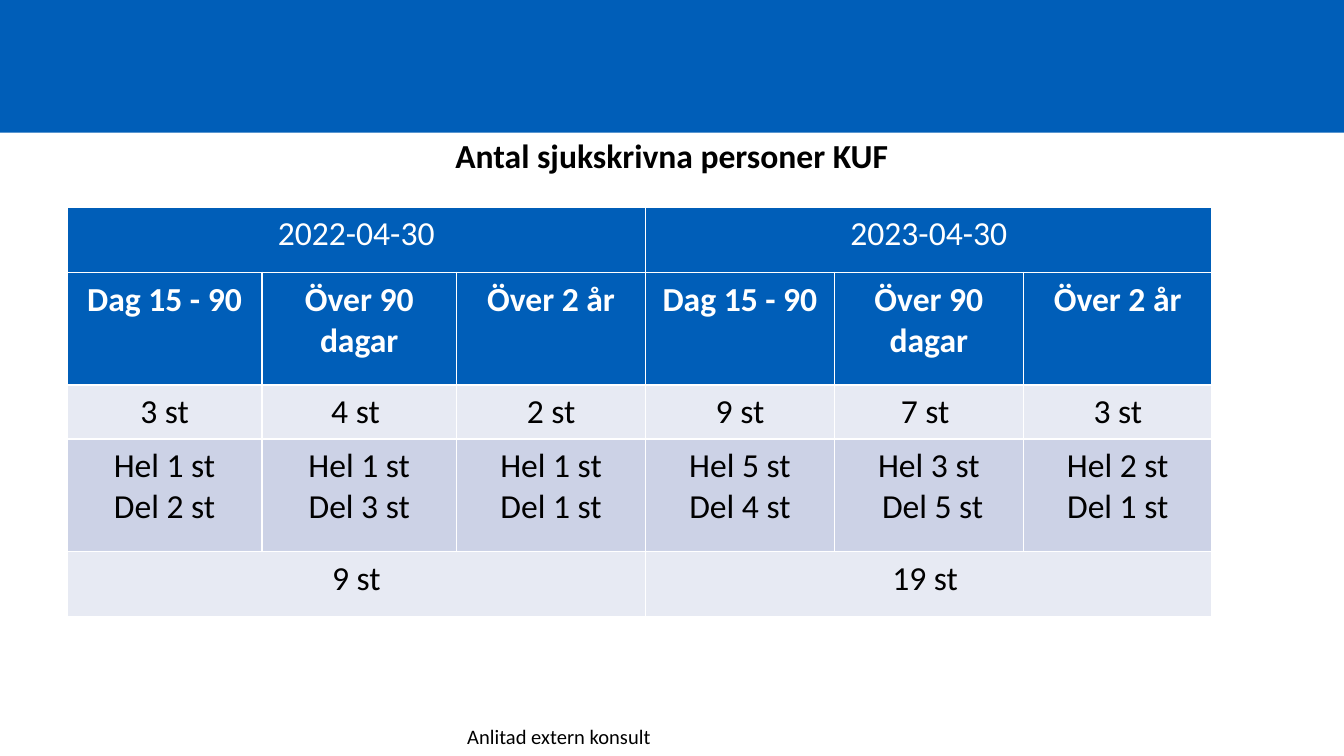
from pptx import Presentation
from pptx.dml.color import RGBColor
from pptx.enum.shapes import MSO_SHAPE as Shape
from pptx.enum.text import PP_ALIGN as Align
from pptx.util import Cm, Pt

BLUE, PALE, LAVENDER = "005EB8", "E7EAF3", "CCD2E6"
WHITE, BLACK = "FFFFFF", "000000"


def paint(fill, color):
    fill.solid()
    fill.fore_color.rgb = RGBColor.from_string(color)


def write(frame, text, size=18, color=BLACK, bold=False, align=Align.CENTER):
    """Fill a text frame, with one paragraph for each line of the text."""
    frame.word_wrap = True
    frame.text = text
    for paragraph in frame.paragraphs:
        paragraph.alignment = align
        font = paragraph.runs[0].font
        font.name, font.size, font.bold = "Calibri", Pt(size), bold
        font.color.rgb = RGBColor.from_string(color)


deck = Presentation()
deck.slide_width, deck.slide_height = Cm(25.4), Cm(14.29)
slide = deck.slides.add_slide(deck.slide_layouts[6])

banner = slide.shapes.add_shape(Shape.RECTANGLE, 0, 0, deck.slide_width, Cm(2.51))
banner.shadow.inherit = False
banner.line.fill.background()
paint(banner.fill, BLUE)

footer = slide.shapes.add_textbox(Cm(8.58), Cm(13.56), Cm(8.69), Cm(0.73))
write(footer.text_frame, "Anlitad extern konsult", size=11, align=Align.LEFT)

heading = slide.shapes.add_textbox(0, Cm(2.42), deck.slide_width, Cm(1.02))
write(heading.text_frame, "Antal sjukskrivna personer KUF", bold=True)

# Each row: height in cm, fill, text colour, bold, texts
periods = ["Dag 15 - 90", "Över 90 dagar", "Över 2 år"]
rows = [
    (1.24, BLUE, WHITE, False, ["2022-04-30", "2023-04-30"]),
    (2.13, BLUE, WHITE, True, periods * 2),
    (0.61, PALE, BLACK, False, ["3 st", "4 st ", "2 st", "9 st", "7 st ", "3 st"]),
    (2.13, LAVENDER, BLACK, False, [
        "Hel 1 st\nDel 2 st", "Hel 1 st\nDel 3 st", "Hel 1 st\nDel 1 st",
        "Hel 5 st\nDel 4 st", "Hel 3 st\n Del 5 st", "Hel 2 st\nDel 1 st"]),
    (1.24, PALE, BLACK, False, ["9 st", "19 st "]),
]
widths = [3.68, 3.68, 3.57, 3.57, 3.57, 3.57]
total_height = sum(row[0] for row in rows)

sick_leave = slide.shapes.add_table(
    len(rows), len(widths), Cm(1.27), Cm(3.91), Cm(sum(widths)), Cm(total_height)).table
for column, width in zip(sick_leave.columns, widths):
    column.width = Cm(width)

for r, (height, fill, color, bold, texts) in enumerate(rows):
    sick_leave.rows[r].height = Cm(height)
    span = len(widths) // len(texts)
    for i, text in enumerate(texts):
        cell = sick_leave.cell(r, i * span)
        if span > 1:
            cell.merge(sick_leave.cell(r, (i + 1) * span - 1))
        paint(cell.fill, fill)
        write(cell.text_frame, text, color=color, bold=bold)

deck.save("out.pptx")
